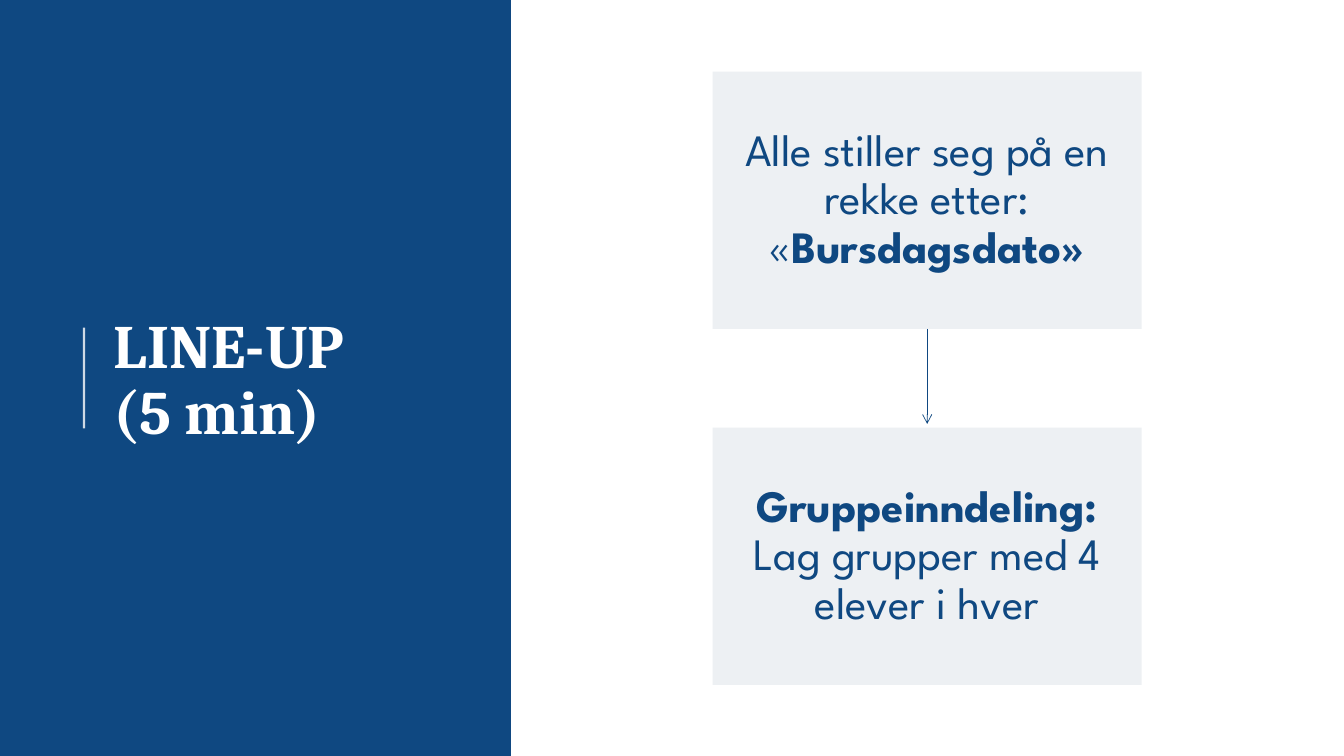
from dataclasses import dataclass

from lxml import etree
from pptx import Presentation
from pptx.dml.color import RGBColor
from pptx.enum import shapes, text
from pptx.oxml import ns
from pptx.util import Pt

NAVY = RGBColor(0x0F, 0x48, 0x81)
PALE = RGBColor(0xED, 0xF0, 0xF3)
WHITE = RGBColor(0xFF, 0xFF, 0xFF)

SLIDE_WIDTH, SLIDE_HEIGHT = 960, 540
PANEL_WIDTH = 365
STEP_LEFT, STEP_TOP = 509, 51.1
STEP_WIDTH, STEP_HEIGHT, STEP_GAP = 306.6, 183.8, 70.6
ARROW_CLEARANCE = 2.7


@dataclass
class Span:
    wording: str
    bold: bool = False


@dataclass
class Step:
    spans: list[Span]


STEPS = [
    Step([Span("Alle stiller seg på en rekke etter: «"), Span("Bursdagsdato»", True)]),
    Step([Span("Gruppeinndeling:", True), Span(" Lag grupper med 4 elever i hver")]),
]


def add_box(page, left: float, top: float, width: float, height: float, color: RGBColor):
    box = page.shapes.add_shape(
        shapes.MSO_SHAPE.RECTANGLE, Pt(left), Pt(top), Pt(width), Pt(height)
    )
    box.shadow.inherit = False
    box.fill.solid()
    box.fill.fore_color.rgb = color
    box.line.fill.background()
    return box


def add_span(para, span: Span, font: str, size: float, color: RGBColor) -> None:
    run = para.add_run()
    run.text = span.wording
    run.font.name = font
    run.font.size = Pt(size)
    run.font.bold = span.bold
    run.font.color.rgb = color


def add_line(page, x: float, top: float, bottom: float, color: RGBColor, width: float):
    line = page.shapes.add_connector(
        shapes.MSO_CONNECTOR.STRAIGHT, Pt(x), Pt(top), Pt(x), Pt(bottom)
    )
    line.line.color.rgb = color
    line.line.width = Pt(width)
    etree.SubElement(line._element.spPr, ns.qn("a:effectLst"))
    return line


def add_title(page) -> None:
    title = page.shapes.title
    title.left, title.top, title.width, title.height = Pt(74.2), Pt(56), Pt(265.7), Pt(433.4)
    frame = title.text_frame
    frame.word_wrap = True
    frame.auto_size = text.MSO_AUTO_SIZE.NONE
    frame.vertical_anchor = text.MSO_ANCHOR.MIDDLE
    para = frame.paragraphs[0]
    para.alignment = text.PP_ALIGN.LEFT
    para.line_spacing = 0.9
    add_span(para, Span("LINE-UP", True), "Cambria", 44, WHITE)
    para.add_line_break()
    add_span(para, Span("(5 min)", True), "Cambria", 44, WHITE)


def add_step(page, step: Step, top: float) -> None:
    box = add_box(page, STEP_LEFT, top, STEP_WIDTH, STEP_HEIGHT, PALE)
    frame = box.text_frame
    frame.word_wrap = True
    frame.vertical_anchor = text.MSO_ANCHOR.MIDDLE
    frame.margin_left = frame.margin_right = Pt(15)
    frame.margin_top = frame.margin_bottom = Pt(15.8)
    para = frame.paragraphs[0]
    para.alignment = text.PP_ALIGN.CENTER
    para.line_spacing = 0.9
    for span in step.spans:
        add_span(para, span, "League Spartan", 32, NAVY)


def add_arrow(page, top: float) -> None:
    arrow = add_line(
        page, STEP_LEFT + STEP_WIDTH / 2, top, top + STEP_GAP - ARROW_CLEARANCE, NAVY, 0.5
    )
    etree.SubElement(arrow.line._get_or_add_ln(), ns.qn("a:tailEnd"), type="arrow")


def main() -> None:
    deck = Presentation()
    deck.slide_width, deck.slide_height = Pt(SLIDE_WIDTH), Pt(SLIDE_HEIGHT)
    page = deck.slides.add_slide(deck.slide_layouts[5])

    panel = add_box(page, 0, 0, PANEL_WIDTH, SLIDE_HEIGHT, NAVY)
    page.shapes.title._element.addprevious(panel._element)
    add_title(page)

    rule = add_line(page, 60, 234, 306, WHITE, 1.5)
    rule_color = rule._element.spPr.find(".//" + ns.qn("a:srgbClr"))
    etree.SubElement(rule_color, ns.qn("a:alpha"), val="80000")

    for index, step in enumerate(STEPS):
        top = STEP_TOP + index * (STEP_HEIGHT + STEP_GAP)
        if index:
            add_arrow(page, top - STEP_GAP)
        add_step(page, step, top)

    deck.save("out.pptx")


if __name__ == "__main__":
    main()
